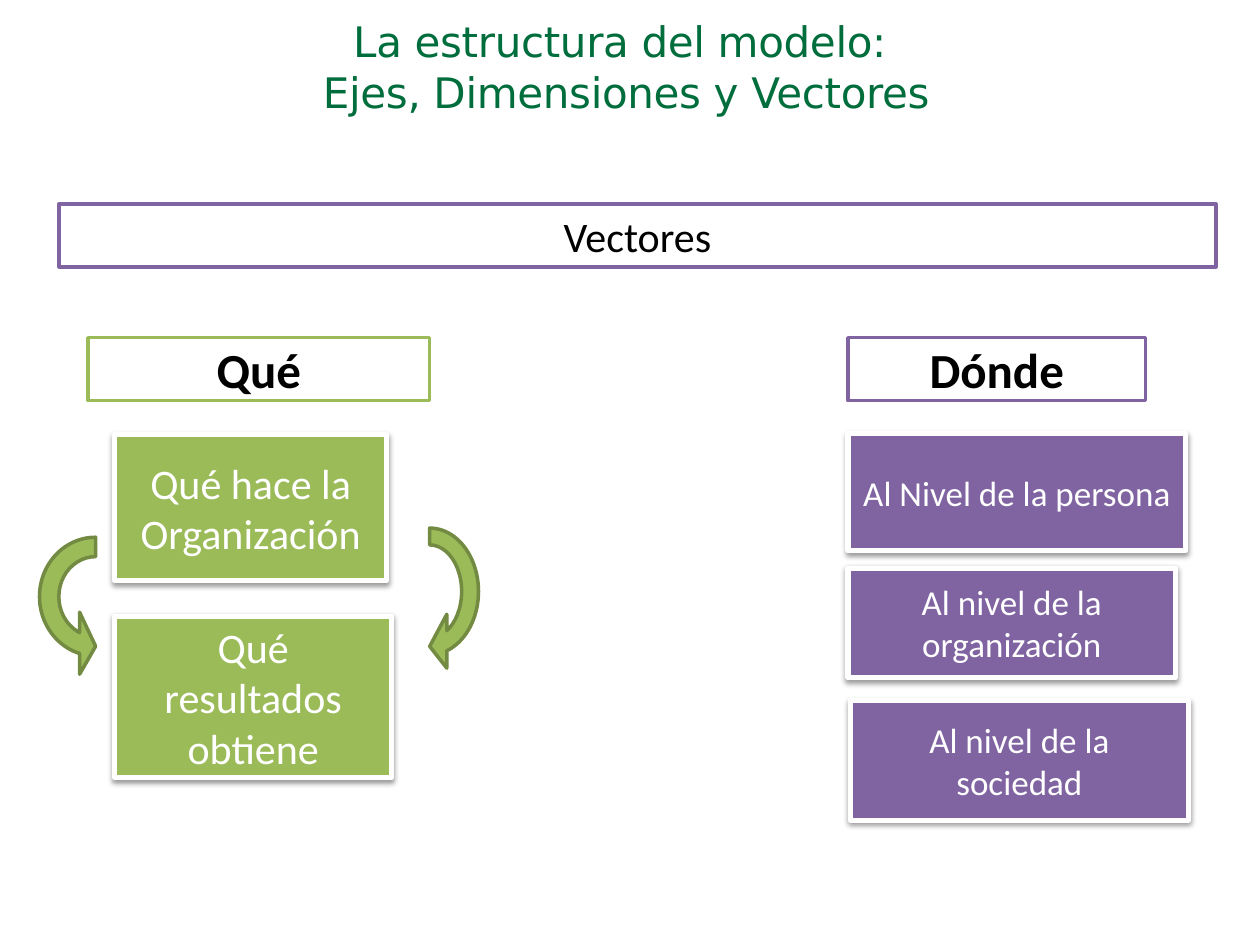
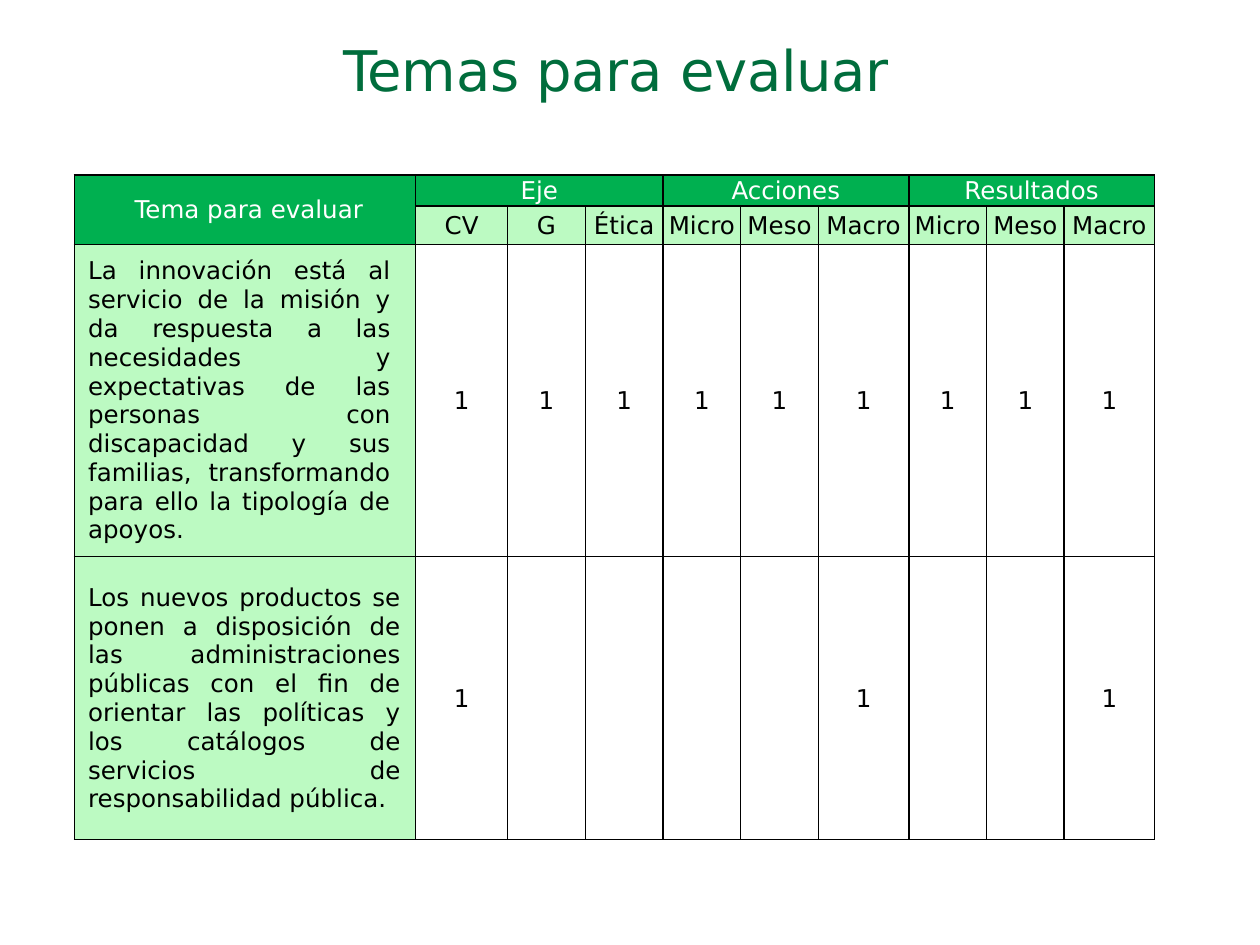
from dataclasses import dataclass

import lxml.etree
import pptx
import pptx.dml.color
import pptx.enum.shapes
import pptx.enum.text
import pptx.oxml.ns
import pptx.util

Pt = pptx.util.Pt
ALIGN = pptx.enum.text.PP_ALIGN
SHAPE = pptx.enum.shapes.MSO_SHAPE
qn = pptx.oxml.ns.qn


def color(value):
    return pptx.dml.color.RGBColor.from_string(value)


def add_element(parent, tag, **attributes):
    return lxml.etree.SubElement(parent, qn(tag), attributes)


@dataclass(frozen=True)
class Theme:
    title: str = "006D3C"
    green: str = "9BBB59"
    dark_green: str = "738A42"
    purple: str = "8064A2"
    table_header: str = "00B050"
    table_label: str = "BCFAC2"
    white: str = "FFFFFF"
    black: str = "000000"
    body_font: str = "Calibri"
    title_font: str = "DejaVu Sans"
    title_size: int = 32
    small_title_size: int = 24
    heading_size: int = 28
    large_size: int = 24
    medium_size: int = 20
    table_size: int = 14


class Deck:
    def __init__(self, theme):
        self.theme = theme
        self.presentation = pptx.Presentation()
        self.presentation.slide_width = Pt(720)
        self.presentation.slide_height = Pt(540)
        self.slide = None

    def new_slide(self):
        self.slide = self.presentation.slides.add_slide(self.presentation.slide_layouts[6])

    def set_text(self, text_frame, text, font_name, size, text_color, bold=False,
                 align=ALIGN.CENTER, indent=0):
        text_frame.text = text
        paragraph = text_frame.paragraphs[0]
        paragraph.alignment = align
        if indent:
            properties = paragraph._p.get_or_add_pPr()
            properties.set("marL", str(Pt(indent)))
            properties.set("indent", "0")
        for run in paragraph.runs:
            run.font.name = font_name
            run.font.size = Pt(size)
            run.font.bold = bold
            run.font.color.rgb = color(text_color)
        return paragraph

    def title(self, text, left, top, height, size):
        box = self.slide.shapes.add_textbox(Pt(left), Pt(top), Pt(436.3), Pt(height))
        frame = box.text_frame
        frame.word_wrap = True
        frame.vertical_anchor = pptx.enum.text.MSO_ANCHOR.MIDDLE
        frame.margin_left = frame.margin_right = frame.margin_bottom = 0
        frame.margin_top = Pt(15.8)
        paragraph = self.set_text(frame, text, self.theme.title_font, size,
                                  self.theme.title, indent=36)
        for run in paragraph.runs:
            run._r.get_or_add_rPr().set("spc", "-20")

    def shape(self, kind, bounds, fill, line, line_width):
        shape = self.slide.shapes.add_shape(kind, *map(Pt, bounds))
        shape.shadow.inherit = False
        shape.fill.solid()
        shape.fill.fore_color.rgb = color(fill)
        shape.line.color.rgb = color(line)
        shape.line.width = Pt(line_width)
        return shape

    def heading(self, text, bounds, line, size, bold=False):
        shape = self.shape(SHAPE.RECTANGLE, bounds, self.theme.white, line, 2)
        self.set_text(shape.text_frame, text, self.theme.body_font, size,
                      self.theme.black, bold)

    def card(self, text, bounds, fill, size):
        shape = self.shape(SHAPE.RECTANGLE, bounds, fill, self.theme.white, 3)
        self.set_text(shape.text_frame, text, self.theme.body_font, size, self.theme.white)
        effects = shape._element.spPr.find(qn("a:effectLst"))
        shadow = add_element(effects, "a:outerShdw", blurRad=str(Pt(3.1)),
                             dist=str(Pt(1.6)), dir="5400000", rotWithShape="0")
        shadow_color = add_element(shadow, "a:srgbClr", val=self.theme.black)
        add_element(shadow_color, "a:alpha", val="38000")

    def curved_arrow(self, bounds, flipped=False):
        shape = self.shape(SHAPE.CIRCULAR_ARROW, bounds, self.theme.green,
                           self.theme.dark_green, 2)
        shape.rotation = 90
        for index, value in enumerate((0.125, 11.42, 204.58, 108, 0.2)):
            shape.adjustments[index] = value
        if flipped:
            shape._element.spPr.find(qn("a:xfrm")).set("flipV", "1")

    def table(self, left, top, widths, heights):
        frame = self.slide.shapes.add_table(len(heights), len(widths), Pt(left), Pt(top),
                                            Pt(sum(widths)), Pt(sum(heights)))
        table = frame.table
        table.first_row = table.horz_banding = False
        for column, width in zip(table.columns, widths):
            column.width = Pt(width)
        for row, height in zip(table.rows, heights):
            row.height = Pt(height)
        for cell in table.iter_cells():
            properties = cell._tc.get_or_add_tcPr()
            for side in ("L", "R", "T", "B"):
                border = add_element(properties, f"a:ln{side}", w=str(Pt(1)))
                fill = add_element(border, "a:solidFill")
                add_element(fill, "a:srgbClr", val=self.theme.black)
            cell.fill.background()
        return table

    def cell(self, cell, text, fill=None, text_color=None, align=ALIGN.CENTER,
             indent=0, right=0.7):
        cell.vertical_anchor = pptx.enum.text.MSO_ANCHOR.MIDDLE
        cell.margin_left = cell.margin_top = Pt(0.7)
        cell.margin_right, cell.margin_bottom = Pt(right), 0
        if fill:
            cell.fill.solid()
            cell.fill.fore_color.rgb = color(fill)
        self.set_text(cell.text_frame, text, self.theme.title_font, self.theme.table_size,
                      text_color or self.theme.black, align=align, indent=indent)


def build_structure(deck):
    theme = deck.theme
    deck.new_slide()
    deck.heading("Vectores", (33.8, 116.6, 661, 36), theme.purple, theme.large_size)
    for text, bounds in (
        ("Qué hace la Organización", (65.5, 248.4, 155.5, 83.5)),
        ("Qué resultados obtiene", (65.5, 352.1, 158.4, 92.2)),
    ):
        deck.card(text, bounds, theme.green, theme.large_size)
    for text, bounds in (
        ("Al Nivel de la persona", (484.6, 247.7, 193, 67)),
        ("Al nivel de la organización", (484.6, 324.7, 187.2, 62.6)),
        ("Al nivel de la sociedad", (486, 400.3, 193, 68.4)),
    ):
        deck.card(text, bounds, theme.purple, theme.medium_size)
    for text, left, width, line in (
        ("Qué", 50.4, 195.1, theme.green),
        ("Dónde", 484.6, 169.9, theme.purple),
    ):
        deck.heading(text, (left, 193, width, 36), line, theme.heading_size, bold=True)
    deck.curved_arrow((198.7, 299.5, 93.6, 77))
    deck.curved_arrow((8.6, 296.6, 92.2, 88.6), flipped=True)
    deck.title("La estructura del modelo: \vEjes, Dimensiones y Vectores",
               121.7, -7.2, 74.2, theme.small_title_size)


def build_topics(deck):
    theme = deck.theme
    deck.new_slide()
    deck.title("Temas para evaluar", 115.9, 4.3, 54.7, theme.title_size)
    narrow, wide = 44.4, 51.7
    widths = [195.1, 52.5, narrow, narrow] + [narrow, narrow, wide] * 2
    table = deck.table(42.5, 100.1, widths, [17.4, 22, 178.3, 161.9])

    table.cell(0, 0).merge(table.cell(1, 0))
    deck.cell(table.cell(0, 0), " Tema para evaluar", theme.table_header, theme.white)
    levels = ["Micro", "Meso", "Macro"]
    groups = {"Eje": ["CV", "G", "Ética"], "Acciones": levels, "Resultados": levels}
    for group_index, (group, names) in enumerate(groups.items()):
        first = 1 + 3 * group_index
        table.cell(0, first).merge(table.cell(0, first + 2))
        deck.cell(table.cell(0, first), group, theme.table_header, theme.white)
        for offset, name in enumerate(names):
            deck.cell(table.cell(1, first + offset), name, theme.table_label)

    topics = (
        ("La innovación está al servicio de la misión y da respuesta a las necesidades y "
         "expectativas de las personas con discapacidad y sus familias, transformando "
         "para ello la tipología de apoyos.", 14.4, range(1, 10)),
        ("Los nuevos productos se ponen a disposición de las administraciones públicas "
         "con el fin de orientar las políticas y los catálogos de servicios de "
         "responsabilidad pública.", 8.6, (1, 6, 9)),
    )
    for row, (topic, right, marked_columns) in enumerate(topics, start=2):
        deck.cell(table.cell(row, 0), topic, theme.table_label,
                  align=ALIGN.JUSTIFY, indent=7.2, right=right)
        for column in marked_columns:
            deck.cell(table.cell(row, column), "1")


def main():
    deck = Deck(Theme())
    build_structure(deck)
    build_topics(deck)
    deck.presentation.save("out.pptx")


if __name__ == "__main__":
    main()
